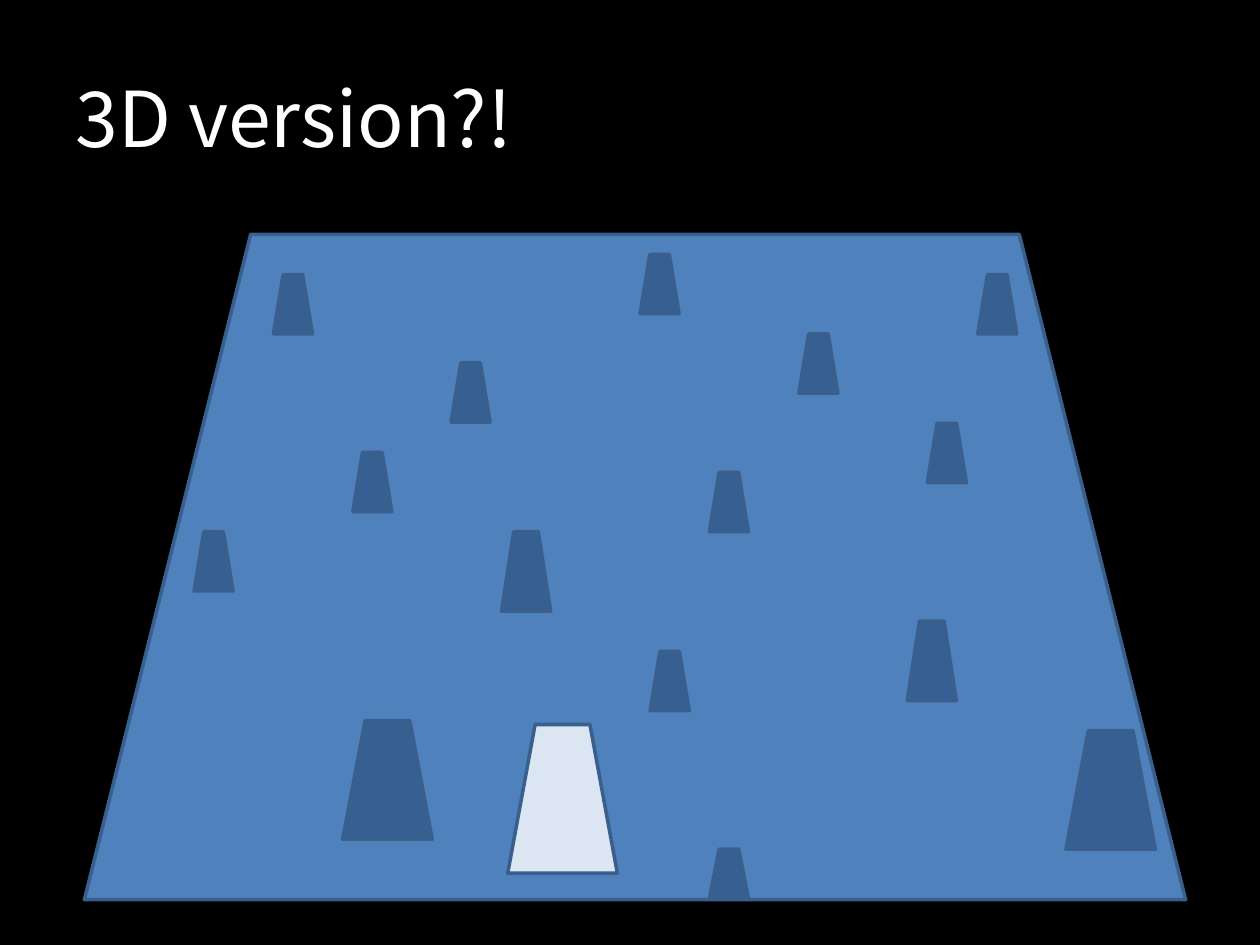
from pptx import Presentation
from pptx import util as u
from pptx.dml import color
from pptx.enum import shapes, text

FONT = "Noto Sans CJK KR"
BLACK, WHITE = "000000", "FFFFFF"
FIELD, EDGE = "4F81BD", "3A5F8C"
OBSTACLE, PLAYER = "376092", "DCE6F2"

SMALL, MEDIUM, LARGE = (0.31, 0.47), (0.39, 0.63), (0.71, 0.94)
OBSTACLES = [
    (SMALL, [(2.8, 3.59), (5.63, 3.75), (7.36, 3.36), (5.16, 5.17),
             (3.58, 2.88), (6.34, 2.65), (2.17, 2.18), (5.08, 2.02),
             (7.76, 2.18), (1.54, 4.22)]),
    (MEDIUM, [(3.98, 4.22), (7.2, 4.93)]),
    (LARGE, [(2.72, 5.72), (8.46, 5.8)]),
    ((0.31, 0.39), [(5.63, 6.74)]),
]


def rgb(value):
    return color.RGBColor.from_string(value)


def set_attrs(obj, values):
    for name, value in values.items():
        setattr(obj, name, value)


def place(sp, left, top, width, height):
    box = dict(left=left, top=top, width=width, height=height)
    set_attrs(sp, {name: u.Inches(value) for name, value in box.items()})


def set_background(s, fill):
    s.background.fill.solid()
    s.background.fill.fore_color.rgb = rgb(fill)


def add_title(s, words):
    sp = s.shapes.title
    place(sp, 0.5, 0.3, 9, 1.25)
    tf = sp.text_frame
    set_attrs(tf, dict(vertical_anchor=text.MSO_ANCHOR.MIDDLE, word_wrap=True))
    p = tf.paragraphs[0]
    p.alignment = text.PP_ALIGN.LEFT
    r = p.add_run()
    r.text = words
    set_attrs(r.font, dict(name=FONT, size=u.Pt(44)))
    r.font.color.rgb = rgb(WHITE)


def add_trapezoid(s, left, top, width, height, fill):
    box = [u.Inches(value) for value in (left, top, width, height)]
    sp = s.shapes.add_shape(shapes.MSO_SHAPE.TRAPEZOID, *box)
    sp.shadow.inherit = False
    sp.fill.solid()
    sp.fill.fore_color.rgb = rgb(fill)
    sp.line.color.rgb = rgb(EDGE)
    sp.line.width = u.Pt(2)


def main():
    prs = Presentation()
    set_attrs(prs, dict(slide_width=u.Inches(10), slide_height=u.Inches(7.5)))
    s = prs.slides.add_slide(prs.slide_layouts[5])
    set_background(s, BLACK)
    add_title(s, "3D version?!")
    add_trapezoid(s, 0.67, 1.86, 8.74, 5.28, FIELD)
    for size, places in OBSTACLES:
        for left, top in places:
            add_trapezoid(s, left, top, *size, OBSTACLE)
    add_trapezoid(s, 4.03, 5.75, 0.87, 1.18, PLAYER)
    prs.save("out.pptx")


if __name__ == "__main__":
    main()
